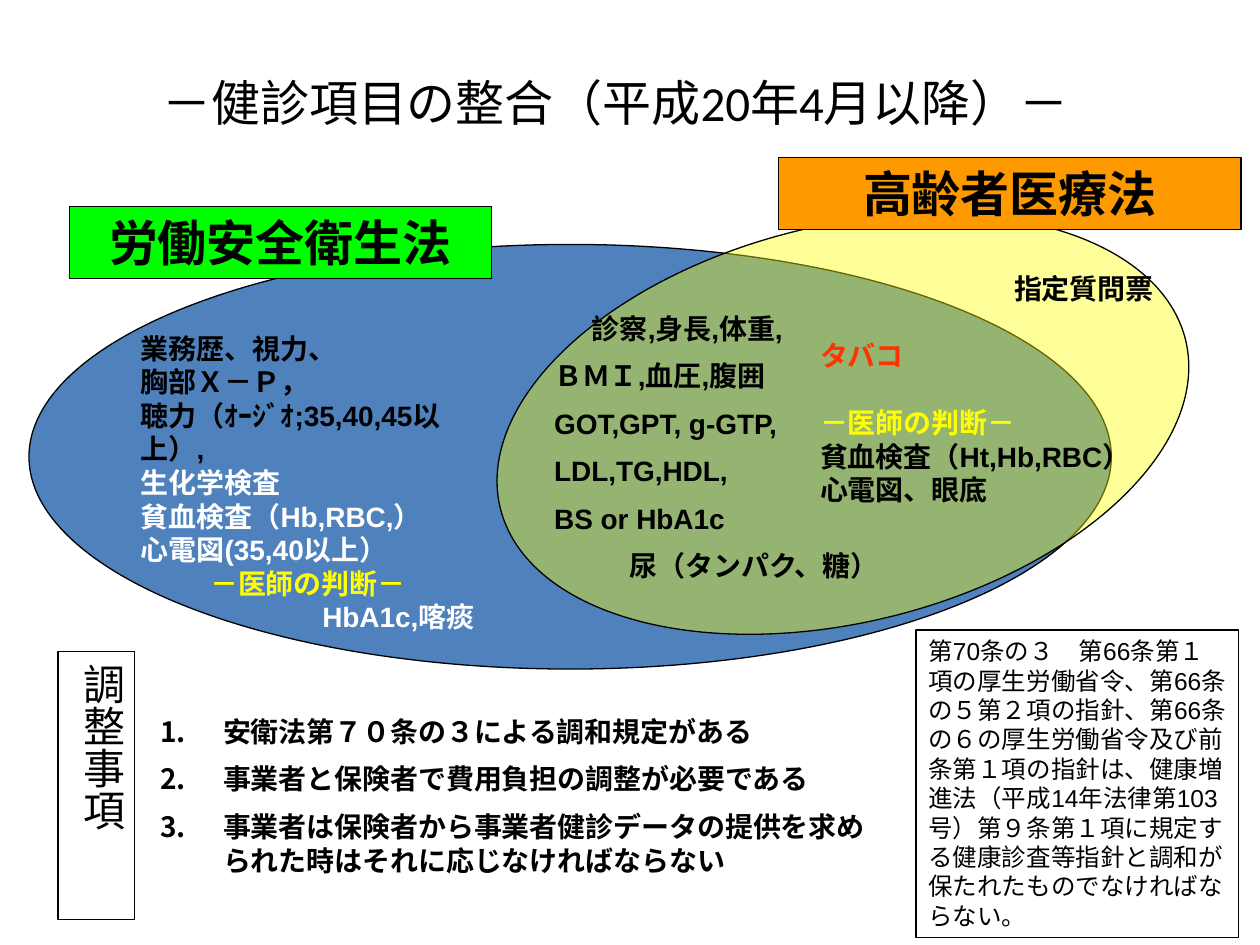
import pptx
import pptx.util
import pptx.dml.color
import pptx.enum.shapes
import pptx.enum.text
import pptx.oxml.ns
import lxml.etree

Pt = pptx.util.Pt
SHAPE = pptx.enum.shapes.MSO_SHAPE
ALIGN = pptx.enum.text.PP_ALIGN
ANCHOR = pptx.enum.text.MSO_ANCHOR
CELL = pptx.util.Inches(0.1)  # the slide is a grid of 100 columns by 75 rows

HEX = {
    "black": "000000", "white": "FFFFFF", "blue": "4F81BD", "yellow": "FFFF00",
    "green": "00FF00", "orange": "FF9900", "red": "FF3300",
}

# Each line: text, colour, left indent in columns, space before in points
LABOUR = [
    ("業務歴、視力、", "black", 0, 0),
    ("胸部Ｘ－Ｐ，", "black", 0, 0),
    ("聴力（ｵｰｼﾞｵ;35,40,45以上）,", "black", 0, 0),
    ("生化学検査", "white", 0, 0),
    ("貧血検査（Hb,RBC,）", "white", 0, 0),
    ("心電図(35,40以上）", "white", 0, 0),
    ("－医師の判断－", "yellow", 5.5, 0),
    ("HbA1c,喀痰", "white", 14.4, 0),
]
SHARED = [
    ("診察,身長,体重,", "black", 3, 0),
    ("ＢＭＩ,血圧,腹囲", "black", 0, 8),
    ("GOT,GPT, g-GTP,", "black", 0, 8),
    ("LDL,TG,HDL,", "black", 0, 8),
    ("BS or HbA1c", "black", 0, 8),
    ("尿（タンパク、糖）", "black", 6, 8),
]
ELDER = [
    ("指定質問票", "black", 15.4, 0),
    ("タバコ", "red", 0, 19),
    ("－医師の判断－", "yellow", 0, 19),
    ("貧血検査（Ht,Hb,RBC）", "black", 0, 0),
    ("心電図、眼底", "black", 0, 0),
]
RULES = [
    "安衛法第７０条の３による調和規定がある",
    "事業者と保険者で費用負担の調整が必要である",
    "事業者は保険者から事業者健診データの提供を求められた時はそれに応じなければならない",
]
LAW = ("第70条の３　第66条第１項の厚生労働省令、第66条の５第２項の指針、"
       "第66条の６の厚生労働省令及び前条第１項の指針は、健康増進法（平成14年法律第103号）"
       "第９条第１項に規定する健康診査等指針と調和が保たれたものでなければならない。")


def grid(*cells):
    return [round(c * CELL) for c in cells]


def paint(hue):
    return pptx.dml.color.RGBColor.from_string(HEX[hue])


def place(item, cells):
    item.left, item.top, item.width, item.height = grid(*cells)


def write(para, text, size, hue="black", bold=True, font="Arial"):
    run = para.add_run()
    run.text = text
    run.font.name, run.font.size, run.font.bold = font, Pt(size), bold
    run.font.color.rgb = paint(hue)


def fill_lines(frame, lines):
    frame.word_wrap = True
    for i, (text, hue, indent, gap) in enumerate(lines):
        para = frame.add_paragraph() if i else frame.paragraphs[0]
        para.space_before = Pt(gap)
        if indent:
            para._p.get_or_add_pPr().set("marL", str(round(indent * CELL)))
        write(para, text, 16, hue)


def add_lines(slide, cells, lines):
    fill_lines(slide.shapes.add_textbox(*grid(*cells)).text_frame, lines)


def add_form(slide, kind, cells, hue=None):
    form = slide.shapes.add_shape(kind, *grid(*cells))
    form.shadow.inherit = False
    if hue:
        form.fill.solid()
        form.fill.fore_color.rgb = paint(hue)
    else:
        form.fill.background()
    form.line.color.rgb = paint("black")
    form.line.width = Pt(0.75)
    return form


def add_label(slide, cells, text, size, hue=None, bold=True, align=ALIGN.CENTER):
    form = add_form(slide, SHAPE.RECTANGLE, cells, hue)
    frame = form.text_frame
    frame.word_wrap = True
    frame.vertical_anchor = ANCHOR.TOP
    frame.paragraphs[0].alignment = align
    write(frame.paragraphs[0], text, size, bold=bold)
    return form


def fade(form, share):
    """Make a solid fill let the shapes behind show through."""
    tone = form.fill._xPr.find(".//" + pptx.oxml.ns.qn("a:srgbClr"))
    alpha = lxml.etree.SubElement(tone, pptx.oxml.ns.qn("a:alpha"))
    alpha.set("val", str(share * 1000))


def number(para):
    """Number a paragraph, with a hanging indent of five columns."""
    props = para._p.get_or_add_pPr()
    props.set("marL", str(5 * CELL))
    props.set("indent", str(-5 * CELL))
    mark = lxml.etree.SubElement(props, pptx.oxml.ns.qn("a:buFont"))
    mark.set("typeface", "+mj-lt")
    mark = lxml.etree.SubElement(props, pptx.oxml.ns.qn("a:buAutoNum"))
    mark.set("type", "arabicPeriod")


def set_title(slide):
    title = slide.shapes.title
    place(title, (1.6, 3.9, 94.5, 8.3))
    frame = title.text_frame
    frame.vertical_anchor = ANCHOR.MIDDLE
    frame.paragraphs[0].alignment = ALIGN.CENTER
    write(frame.paragraphs[0], "－健診項目の整合（平成20年4月以降）－",
          28, bold=False, font="Calibri")


def set_rules(slide):
    body = slide.placeholders[1]
    place(body, (11.7, 56.2, 59, 14.5))
    frame = body.text_frame
    frame.auto_size = pptx.enum.text.MSO_AUTO_SIZE.NONE
    fill_lines(frame, [(rule, "black", 0, 8 if i else 0) for i, rule in enumerate(RULES)])
    for para in frame.paragraphs:
        number(para)


def add_venn(slide):
    add_form(slide, SHAPE.OVAL, (2.3, 19.4, 85.9, 33.7), "blue")
    elder = add_form(slide, SHAPE.OVAL, (38.9, 17.9, 56, 31.5), "yellow")
    elder.rotation = 346.2
    fade(elder, 40)
    add_lines(slide, (43, 24.2, 33.6, 27.9), SHARED)
    add_lines(slide, (10.2, 25.8, 29.7, 22.6), LABOUR)
    add_lines(slide, (64.1, 21.1, 28.9, 22.6), ELDER)
    add_label(slide, (5.5, 16.4, 33.5, 5.7), "労働安全衛生法", 28, "green")
    add_label(slide, (61.8, 12.5, 36.7, 5.7), "高齢者医療法", 28, "orange")


def add_notes(slide):
    add_label(slide, (72.7, 50, 25.6, 24.4), LAW, 14, bold=False, align=ALIGN.LEFT)
    side = add_label(slide, (4.6, 51.7, 6.1, 21.3), "調整事項", 24, "white",
                     bold=False, align=ALIGN.LEFT)
    side.text_frame.margin_top = CELL
    side.text_frame._txBody.bodyPr.set("vert", "eaVert")


def main():
    deck = pptx.Presentation()
    deck.slide_width, deck.slide_height = grid(100, 75)
    slide = deck.slides.add_slide(deck.slide_layouts[1])
    set_title(slide)
    add_venn(slide)
    set_rules(slide)
    add_notes(slide)
    deck.save("out.pptx")


if __name__ == "__main__":
    main()
